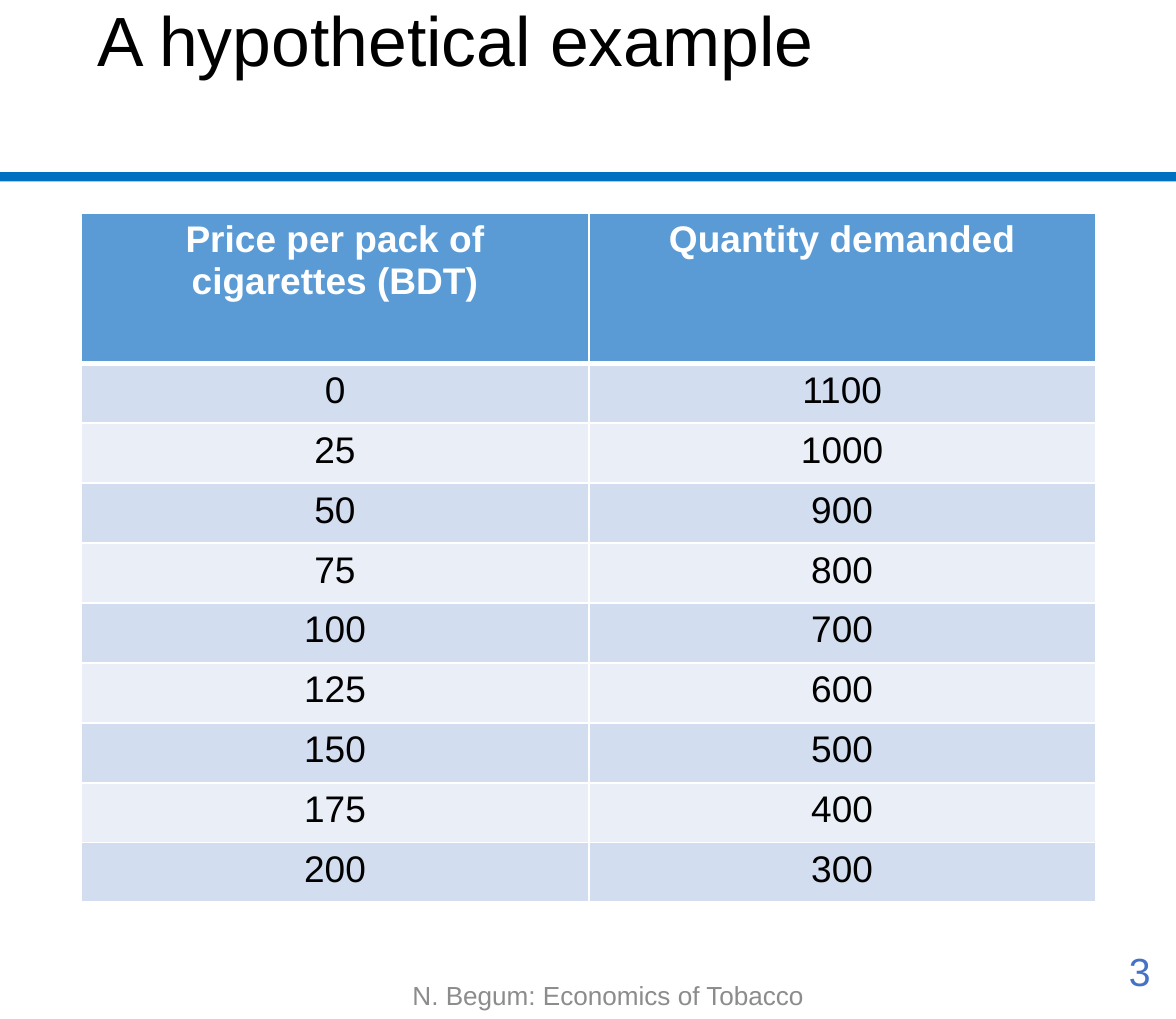
from dataclasses import dataclass

from lxml import etree
from pptx import Presentation
from pptx import util as u
from pptx.dml.color import RGBColor
from pptx.enum import shapes, text
from pptx.oxml.ns import qn

COLOURS = {
    "rule": "0070C0",
    "header": "5B9BD5",
    "odd_row": "D2DEEF",
    "even_row": "EAEFF7",
    "white": "FFFFFF",
    "black": "000000",
    "footer": "8C8C8C",
    "number": "4472C4",
}
FONT = "Arial"
ALIGN = text.PP_ALIGN
ANCHOR = text.MSO_ANCHOR


@dataclass
class Box:
    left: float
    top: float
    width: float
    height: float

    def lengths(self) -> tuple:
        return tuple(u.Cm(v) for v in (self.left, self.top, self.width, self.height))


@dataclass
class Label:
    words: str
    box: Box
    size: int
    colour: str
    align: ALIGN
    anchor: ANCHOR


TITLE_BOX = Box(1.32, -0.03, 16.43, 2.82)
RULE_BOX = Box(0, 2.79, 19.05, 0.15)
HEADER_HEIGHT, ROW_HEIGHT = 2.44, 0.97
HEADINGS = ("Price per pack of cigarettes (BDT)", "Quantity demanded")
DEMAND = [(25 * step, 1100 - 100 * step) for step in range(9)]
TABLE_BOX = Box(1.32, 3.45, 16.43, HEADER_HEIGHT + ROW_HEIGHT * len(DEMAND))
LABELS = [
    Label("N. Begum: Economics of Tobacco", Box(6.3, 15.62, 7.11, 0.89),
          12, "footer", ALIGN.CENTER, ANCHOR.BOTTOM),
    Label("3", Box(14.6, 15.29, 4.29, 0.89),
          18, "number", ALIGN.RIGHT, ANCHOR.MIDDLE),
]


def write(frame, words: str, *, size: int, colour: str, align: ALIGN = ALIGN.LEFT,
          bold: bool = False, spacing: float = 1.0) -> None:
    paragraph = frame.paragraphs[0]
    paragraph.alignment = align
    paragraph.line_spacing = spacing
    run = paragraph.add_run()
    run.text = words
    run.font.name = FONT
    run.font.size = u.Pt(size)
    run.font.bold = bold
    run.font.color.rgb = RGBColor.from_string(COLOURS[colour])


def place(shape, box: Box) -> None:
    shape.left, shape.top, shape.width, shape.height = box.lengths()


def set_borders(cell, widths: dict[str, int]) -> None:
    properties = cell._tc.get_or_add_tcPr()
    for position, (side, width) in enumerate(widths.items()):
        line = etree.Element(qn(f"a:{side}"), w=str(u.Pt(width)))
        fill = etree.SubElement(line, qn("a:solidFill"))
        etree.SubElement(fill, qn("a:srgbClr"), val=COLOURS["white"])
        properties.insert(position, line)


def draw_title(slide) -> None:
    title = slide.shapes.title
    place(title, TITLE_BOX)
    frame = title.text_frame
    frame.auto_size = text.MSO_AUTO_SIZE.NONE
    frame.vertical_anchor = ANCHOR.TOP
    write(frame, "A hypothetical example", size=32, colour="black", spacing=0.9)


def draw_rule(slide) -> None:
    rule = slide.shapes.add_shape(shapes.MSO_SHAPE.RECTANGLE, *RULE_BOX.lengths())
    rule.shadow.inherit = False
    rule.fill.solid()
    rule.fill.fore_color.rgb = RGBColor.from_string(COLOURS["rule"])
    rule.line.fill.background()


def draw_table(slide) -> None:
    rows = [HEADINGS, *DEMAND]
    table = slide.shapes.add_table(len(rows), len(HEADINGS), *TABLE_BOX.lengths()).table
    for column in table.columns:
        column.width = u.Cm(TABLE_BOX.width / len(HEADINGS))
    for row_index, values in enumerate(rows):
        is_header = row_index == 0
        table.rows[row_index].height = u.Cm(HEADER_HEIGHT if is_header else ROW_HEIGHT)
        band = "header" if is_header else ("even_row", "odd_row")[row_index % 2]
        for column_index, value in enumerate(values):
            cell = table.cell(row_index, column_index)
            cell.margin_left = cell.margin_right = u.Cm(0.19)
            cell.margin_top = cell.margin_bottom = u.Cm(0.1)
            cell.fill.solid()
            cell.fill.fore_color.rgb = RGBColor.from_string(COLOURS[band])
            set_borders(cell, {"lnL": 1, "lnR": 1, "lnT": 3 if row_index == 1 else 1,
                               "lnB": 3 if is_header else 1})
            write(cell.text_frame, str(value), size=17, align=ALIGN.CENTER,
                  colour="white" if is_header else "black", bold=is_header)


def draw_label(slide, label: Label) -> None:
    frame = slide.shapes.add_textbox(*label.box.lengths()).text_frame
    frame.word_wrap = True
    frame.vertical_anchor = label.anchor
    write(frame, label.words, size=label.size, colour=label.colour, align=label.align)


def main() -> None:
    presentation = Presentation()
    presentation.slide_width = u.Cm(19.05)
    presentation.slide_height = u.Cm(16.51)
    slide = presentation.slides.add_slide(presentation.slide_layouts[5])

    # Heading and the bar under it
    draw_rule(slide)
    draw_title(slide)

    # Demand schedule
    draw_table(slide)

    # Footer and slide number
    for label in LABELS:
        draw_label(slide, label)

    presentation.save("out.pptx")


if __name__ == "__main__":
    main()
